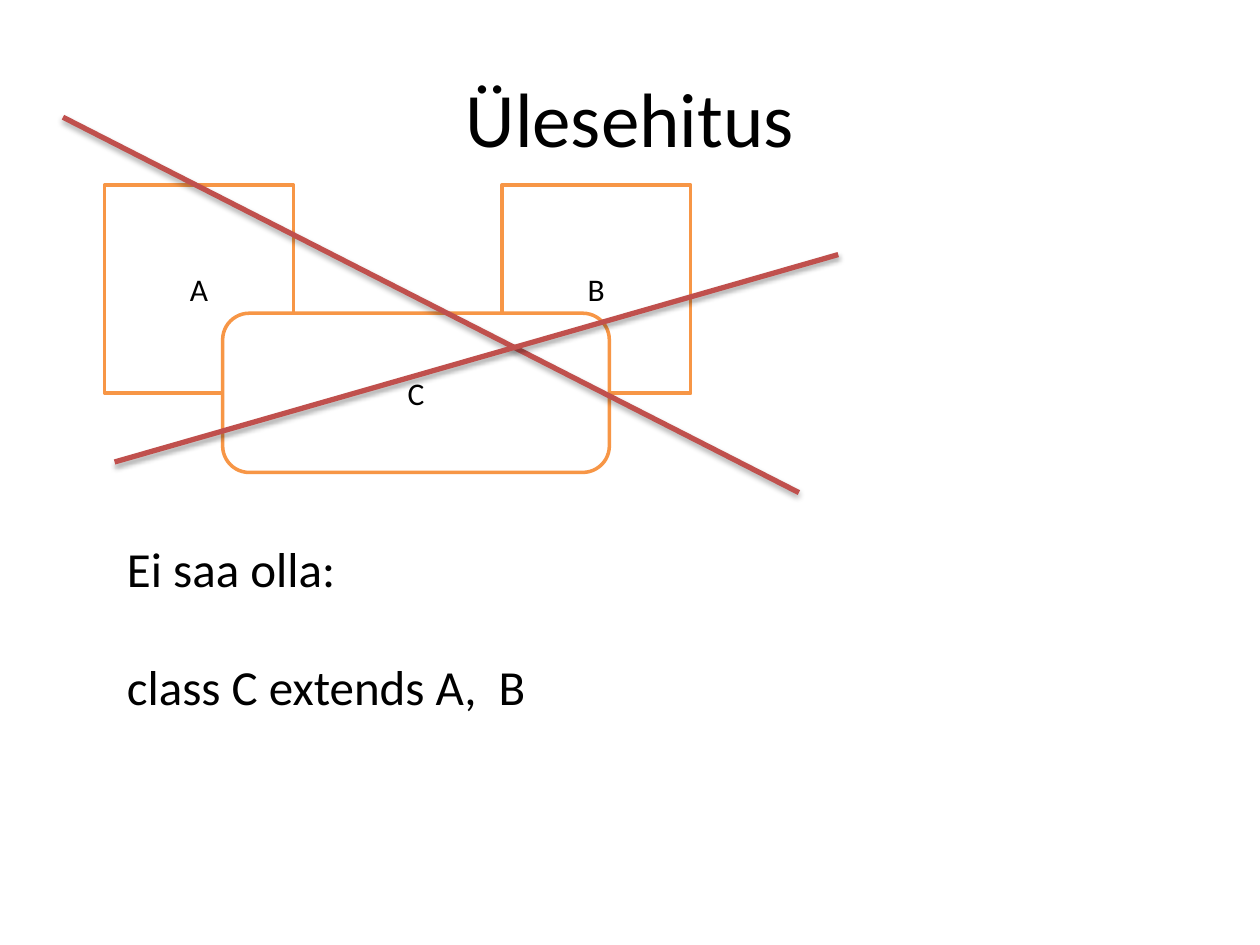
import dataclasses

import lxml.etree
import pptx
import pptx.dml.color
import pptx.enum.shapes
import pptx.enum.text
import pptx.oxml.ns
import pptx.util

Pt = pptx.util.Pt
RGB = pptx.dml.color.RGBColor.from_string
SHAPE = pptx.enum.shapes.MSO_SHAPE
ALIGN = pptx.enum.text.PP_ALIGN
ANCHOR = pptx.enum.text.MSO_ANCHOR
qn = pptx.oxml.ns.qn


@dataclasses.dataclass(frozen=True)
class Theme:
    font: str = "Calibri"
    text: str = "000000"
    paper: str = "FFFFFF"
    outline: str = "F79646"
    strike: str = "C0504D"
    title_size: float = 44
    body_size: float = 28
    label_size: float = 18


THEME = Theme()


def write_text(tf, lines, size, align=ALIGN.LEFT, anchor=ANCHOR.TOP, gap=0):
    """Write one paragraph per line, with gap points between paragraphs."""
    tf.word_wrap = True
    tf.vertical_anchor = anchor
    for i, line in enumerate(lines):
        p = tf.add_paragraph() if i else tf.paragraphs[0]
        p.alignment = align
        p.space_before = Pt(gap if i else 0)
        r = p.add_run()
        r.text = line
        r.font.name = THEME.font
        r.font.size = Pt(size)
        r.font.color.rgb = RGB(THEME.text)


def add_text(s, box, lines, size, **fmt):
    sp = s.shapes.add_textbox(*map(Pt, box))
    write_text(sp.text_frame, lines, size, **fmt)


def add_class_box(s, kind, box, label):
    sp = s.shapes.add_shape(kind, *map(Pt, box))
    sp.shadow.inherit = False
    sp.fill.solid()
    sp.fill.fore_color.rgb = RGB(THEME.paper)
    sp.line.color.rgb = RGB(THEME.outline)
    sp.line.width = Pt(2)
    write_text(sp.text_frame, [label], THEME.label_size,
               align=ALIGN.CENTER, anchor=ANCHOR.MIDDLE)


def add_strike(s, x1, y1, x2, y2):
    """Draw a crossing-out line with a soft shadow below it."""
    ln = s.shapes.add_connector(pptx.enum.shapes.MSO_CONNECTOR.STRAIGHT,
                                Pt(x1), Pt(y1), Pt(x2), Pt(y2))
    ln.line.color.rgb = RGB(THEME.strike)
    ln.line.width = Pt(3)
    sub = lxml.etree.SubElement
    effects = sub(ln._element.spPr, qn("a:effectLst"))
    shadow = sub(effects, qn("a:outerShdw"), blurRad=str(Pt(3.1)),
                 dist=str(Pt(1.8)), dir="5400000", rotWithShape="0")
    color = sub(shadow, qn("a:srgbClr"), val=THEME.text)
    sub(color, qn("a:alpha"), val="35000")


def add_class_diagram(s, box):
    """Two parent classes with class C overlapping them."""
    x, y, w, h = box
    parent_w, parent_h = 108, 119
    for label, left in (("A", x), ("B", x + w - parent_w)):
        add_class_box(s, SHAPE.RECTANGLE, (left, y, parent_w, parent_h), label)
    child_w, child_h = 221, 91
    add_class_box(s, SHAPE.ROUNDED_RECTANGLE,
                  (x + 67.5, y + h - child_h, child_w, child_h), "C")


def add_cross(s, box):
    """Two lines that cross out the diagram."""
    x, y, w, h = box
    add_strike(s, x, y, x + w - 22.5, y + h)
    add_strike(s, x + w, y + 78.5, x + 29.5, y + h - 17.5)


def main():
    prs = pptx.Presentation()
    prs.slide_width, prs.slide_height = Pt(720), Pt(540)
    s = prs.slides.add_slide(prs.slide_layouts[6])

    # Title
    add_text(s, (36, 21.6, 648, 90), ["Ülesehitus"], THEME.title_size,
             align=ALIGN.CENTER, anchor=ANCHOR.MIDDLE)

    # Class diagram
    add_class_diagram(s, (59.75, 105.75, 335, 164.25))

    # Explanation, one line height between the paragraphs
    add_text(s, (65.5, 304, 561.5, 108.5),
             ["Ei saa olla:", "class C extends A,  B"], THEME.body_size, gap=34)

    # Crossing out
    add_cross(s, (36, 67, 443, 214.5))

    prs.save("out.pptx")


if __name__ == "__main__":
    main()
